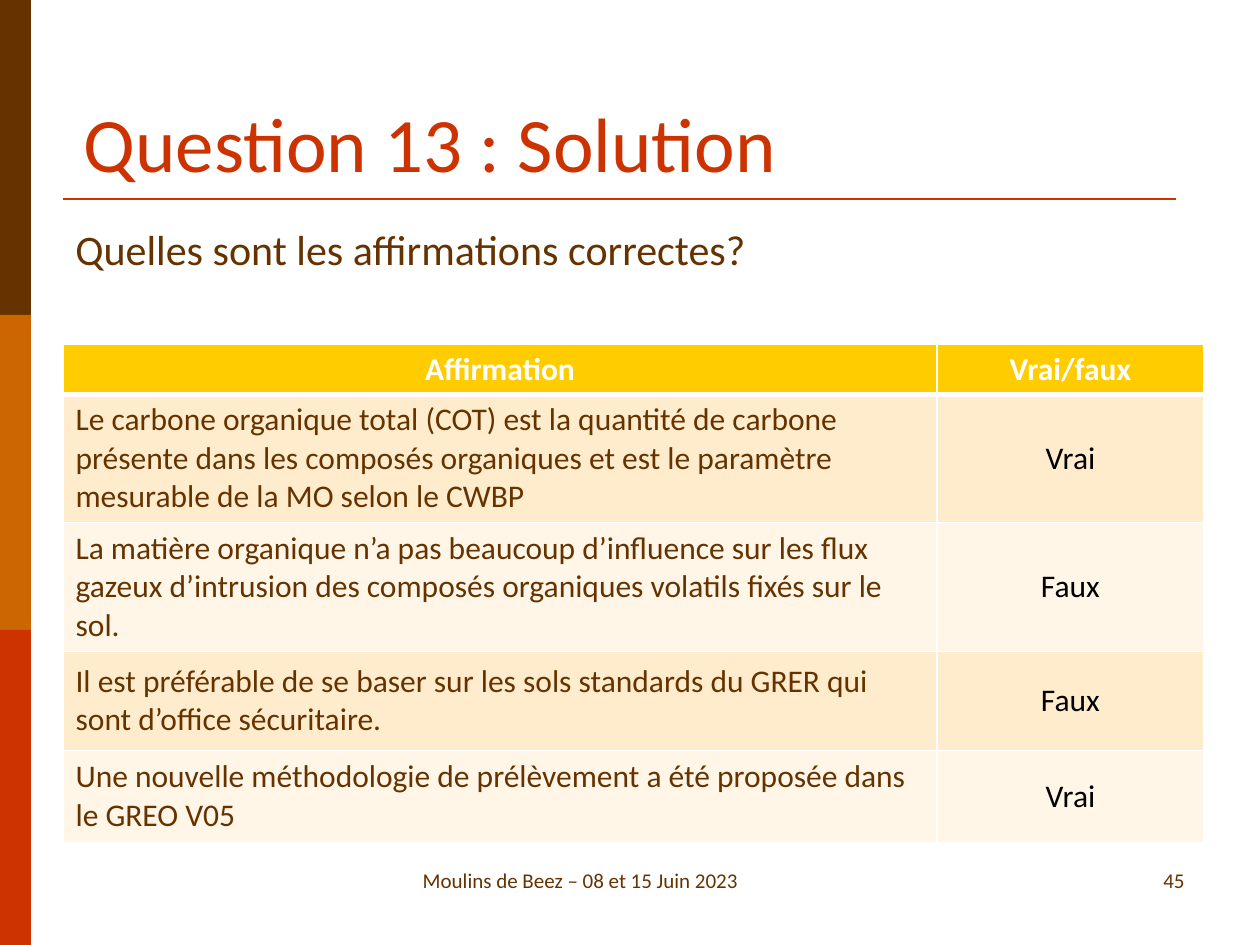
import pptx
import pptx.util
import pptx.oxml
import pptx.dml.color
import pptx.enum.text
import pptx.enum.shapes

RGB = pptx.dml.color.RGBColor
ALIGN = pptx.enum.text.PP_ALIGN
ANCHOR = pptx.enum.text.MSO_ANCHOR
KIND = pptx.enum.shapes.MSO_SHAPE
LINK = pptx.enum.shapes.MSO_CONNECTOR

BROWN = RGB(0x66, 0x33, 0x00)
OCHRE = RGB(0xCC, 0x66, 0x00)
RED = RGB(0xCC, 0x33, 0x00)
GOLD = RGB(0xFF, 0xCC, 0x00)
SAND = RGB(0xFF, 0xEC, 0xCC)
CREAM = RGB(0xFF, 0xF6, 0xE7)
WHITE = RGB(0xFF, 0xFF, 0xFF)
BLACK = RGB(0, 0, 0)

FONT = "Calibri"
SCALE = 914400 / 126
NS = 'xmlns:a="http://schemas.openxmlformats.org/drawingml/2006/main"'

HEAD = ("Affirmation", "Vrai/faux")
CLAIMS = [
    ("Le carbone organique total (COT) est la quantité de carbone présente dans "
     "les composés organiques et est le paramètre mesurable de la MO selon le CWBP", "Vrai"),
    ("La matière organique n’a pas beaucoup d’influence sur les flux gazeux "
     "d’intrusion des composés organiques volatils fixés sur le sol.", "Faux"),
    ("Il est préférable de se baser sur les sols standards du GRER qui sont "
     "d’office sécuritaire.", "Faux"),
    ("Une nouvelle méthodologie de prélèvement a été proposée dans le GREO V05", "Vrai"),
]
WIDTHS = (874, 267)
HEIGHTS = (50, 128, 129, 99, 92)


def px(*vals):
    return [pptx.util.Emu(round(v * SCALE)) for v in vals]


def write(frame, text, size, color, align=ALIGN.LEFT, bold=False):
    frame.text = text
    para = frame.paragraphs[0]
    para.alignment = align
    font = para.runs[0].font
    font.name = FONT
    font.size = pptx.util.Pt(size)
    font.bold = bold
    font.color.rgb = color


def add_title(slide, text, box):
    title = slide.shapes.title
    title.left, title.top, title.width, title.height = px(*box)
    frame = title.text_frame
    frame.auto_size = pptx.enum.text.MSO_AUTO_SIZE.NONE
    frame.vertical_anchor = ANCHOR.BOTTOM
    write(frame, text, 44, RED)


def add_text(slide, text, box, size, align=ALIGN.LEFT):
    frame = slide.shapes.add_textbox(*px(*box)).text_frame
    frame.word_wrap = True
    write(frame, text, size, BROWN, align)


def add_band(slide, box, color):
    band = slide.shapes.add_shape(KIND.RECTANGLE, *px(*box))
    band.shadow.inherit = False
    band.fill.solid()
    band.fill.fore_color.rgb = color
    band.line.fill.background()


def add_rule(slide, ends):
    rule = slide.shapes.add_connector(LINK.STRAIGHT, *px(*ends))
    rule.line.color.rgb = RED
    rule.line.width = pptx.util.Pt(1.5)
    rule._element.spPr.append(pptx.oxml.parse_xml(f"<a:effectLst {NS}/>"))


def add_edges(cell, top, bottom):
    props = cell._tc.get_or_add_tcPr()
    for side, width in zip("LRTB", (1, 1, top, bottom)):
        props.append(pptx.oxml.parse_xml(
            f'<a:ln{side} {NS} w="{pptx.util.Pt(width)}"><a:solidFill>'
            f'<a:srgbClr val="{WHITE}"/></a:solidFill></a:ln{side}>'))


def fill_cell(cell, text, row, col):
    cell.vertical_anchor = ANCHOR.MIDDLE
    add_edges(cell, 3 if row == 1 else 1, 3 if row == 0 else 1)
    cell.fill.solid()
    if row == 0:
        back, ink = GOLD, WHITE
    else:
        back = SAND if row % 2 else CREAM
        ink = BLACK if col else BROWN
    cell.fill.fore_color.rgb = back
    align = ALIGN.LEFT if row and not col else ALIGN.CENTER
    write(cell.text_frame, text, 18, ink, align, row == 0)


def add_grid(slide, left, top):
    rows = [HEAD, *CLAIMS]
    box = px(left, top, sum(WIDTHS), sum(HEIGHTS))
    table = slide.shapes.add_table(len(rows), len(HEAD), *box).table
    for col, width in zip(table.columns, px(*WIDTHS)):
        col.width = width
    for row, height in zip(table.rows, px(*HEIGHTS)):
        row.height = height
    for r, texts in enumerate(rows):
        for c, text in enumerate(texts):
            fill_cell(table.cell(r, c), text, r, c)


def main():
    deck = pptx.Presentation()
    deck.slide_width, deck.slide_height = px(1260, 945)
    slide = deck.slides.add_slide(deck.slide_layouts[5])
    for i, color in enumerate((BROWN, OCHRE, RED)):
        add_band(slide, (0, 315 * i, 31, 315), color)
    add_rule(slide, (63, 199, 1176, 199))
    add_title(slide, "Question 13 : Solution", (71, 37, 1134, 157))
    add_text(slide, "Quelles sont les affirmations correctes?", (63, 217, 1150, 70), 24)
    add_text(slide, "45", (1067, 861, 130, 63), 12, ALIGN.RIGHT)
    add_text(slide, "Moulins de Beez – 08 et 15 Juin 2023", (134, 861, 893, 63), 12, ALIGN.CENTER)
    add_grid(slide, 63, 344)
    deck.save("out.pptx")


if __name__ == "__main__":
    main()
